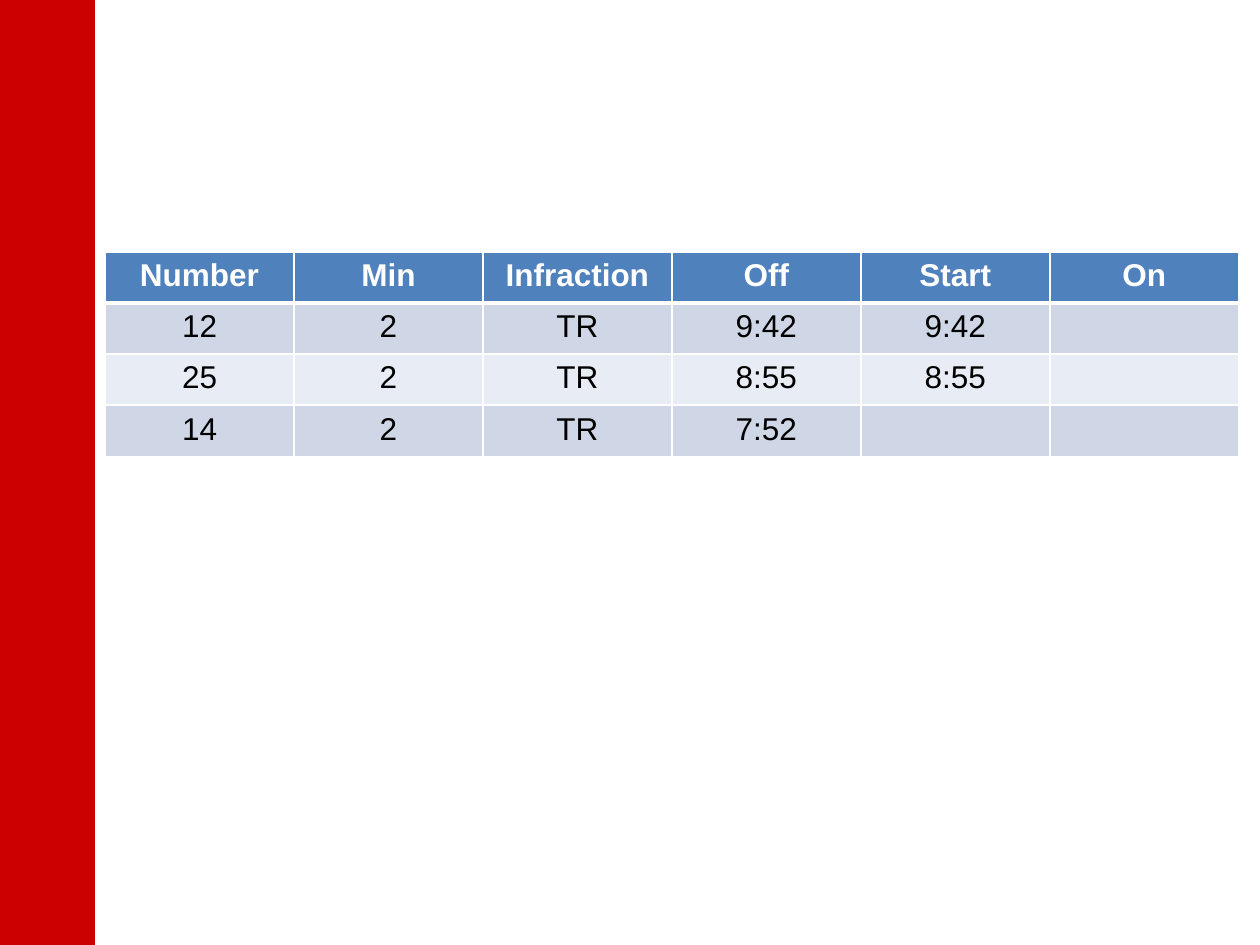
from lxml.etree import SubElement
from pptx import Presentation
from pptx.dml.color import RGBColor
from pptx.enum.shapes import MSO_SHAPE as Preset
from pptx.enum.text import PP_ALIGN as Align
from pptx.oxml.ns import qn
from pptx.util import Pt

EMU_PER_PX = 914400 // 126
COLUMN_WIDTH, ROW_HEIGHT = 189, 51
HEADER_FILL, BAND_FILLS = "4F81BD", ("CFD7E7", "E8ECF4")
PENALTIES = [
    ("Number", "Min", "Infraction", "Off", "Start", "On"),
    ("12", "2", "TR", "9:42", "9:42", ""),
    ("25", "2", "TR", "8:55", "8:55", ""),
    ("14", "2", "TR", "7:52", "", ""),
]


def px(length):
    """Turn whole pixels into EMU."""
    return length * EMU_PER_PX


def color(hex_value):
    """Turn a hex string into a colour."""
    return RGBColor.from_string(hex_value)


def paint(fill, hex_value):
    """Give a fill one solid colour."""
    fill.solid()
    fill.fore_color.rgb = color(hex_value)


def add_side_bar(slide, width, height, hex_value):
    """Draw the full-height bar on the left edge."""
    bar = slide.shapes.add_shape(Preset.RECTANGLE, 0, 0, px(width), px(height))
    bar.shadow.inherit = False
    paint(bar.fill, hex_value)
    paint(bar.line.fill, hex_value)
    bar.line.width = Pt(0.75)


def add_borders(cell, widths):
    """Rule the sides of a cell in white, with widths in points."""
    properties = cell._tc.get_or_add_tcPr()
    for side, width in widths.items():
        border = SubElement(properties, qn(f"a:ln{side}"), w=str(Pt(width)))
        SubElement(SubElement(border, qn("a:solidFill")), qn("a:srgbClr"), val="FFFFFF")


def write_cell(cell, entry, text_format):
    """Put centred, formatted text into a cell."""
    paragraph = cell.text_frame.paragraphs[0]
    paragraph.alignment = Align.CENTER
    if entry:
        run = paragraph.add_run()
        run.text = entry
        for name, value in text_format.items():
            setattr(run.font, name, value)
        run.font.color.rgb = color("FFFFFF" if text_format["bold"] else "000000")


def add_penalty_table(slide, left, top):
    """Build the penalty table with a header and banded rows."""
    row_count, column_count = len(PENALTIES), len(PENALTIES[0])
    table = slide.shapes.add_table(
        row_count, column_count, px(left), px(top),
        px(COLUMN_WIDTH * column_count), px(ROW_HEIGHT * row_count)).table
    for row_index, entries in enumerate(PENALTIES):
        is_header = row_index == 0
        row_fill = HEADER_FILL if is_header else BAND_FILLS[(row_index - 1) % 2]
        widths = {"L": 1, "R": 1, "T": 3 if row_index == 1 else 1, "B": 3 if is_header else 1}
        text_format = {"name": "Arial", "size": Pt(18), "bold": is_header}
        for column_index, entry in enumerate(entries):
            cell = table.cell(row_index, column_index)
            add_borders(cell, widths)
            paint(cell.fill, row_fill)
            write_cell(cell, entry, text_format)


def main():
    """Build and save the penalty slide."""
    deck = Presentation()
    deck.slide_width, deck.slide_height = px(1260), px(945)
    slide = deck.slides.add_slide(deck.slide_layouts[6])
    add_side_bar(slide, 94, 945, "CC0000")
    add_penalty_table(slide, 105, 252)
    deck.save("out.pptx")


if __name__ == "__main__":
    main()
